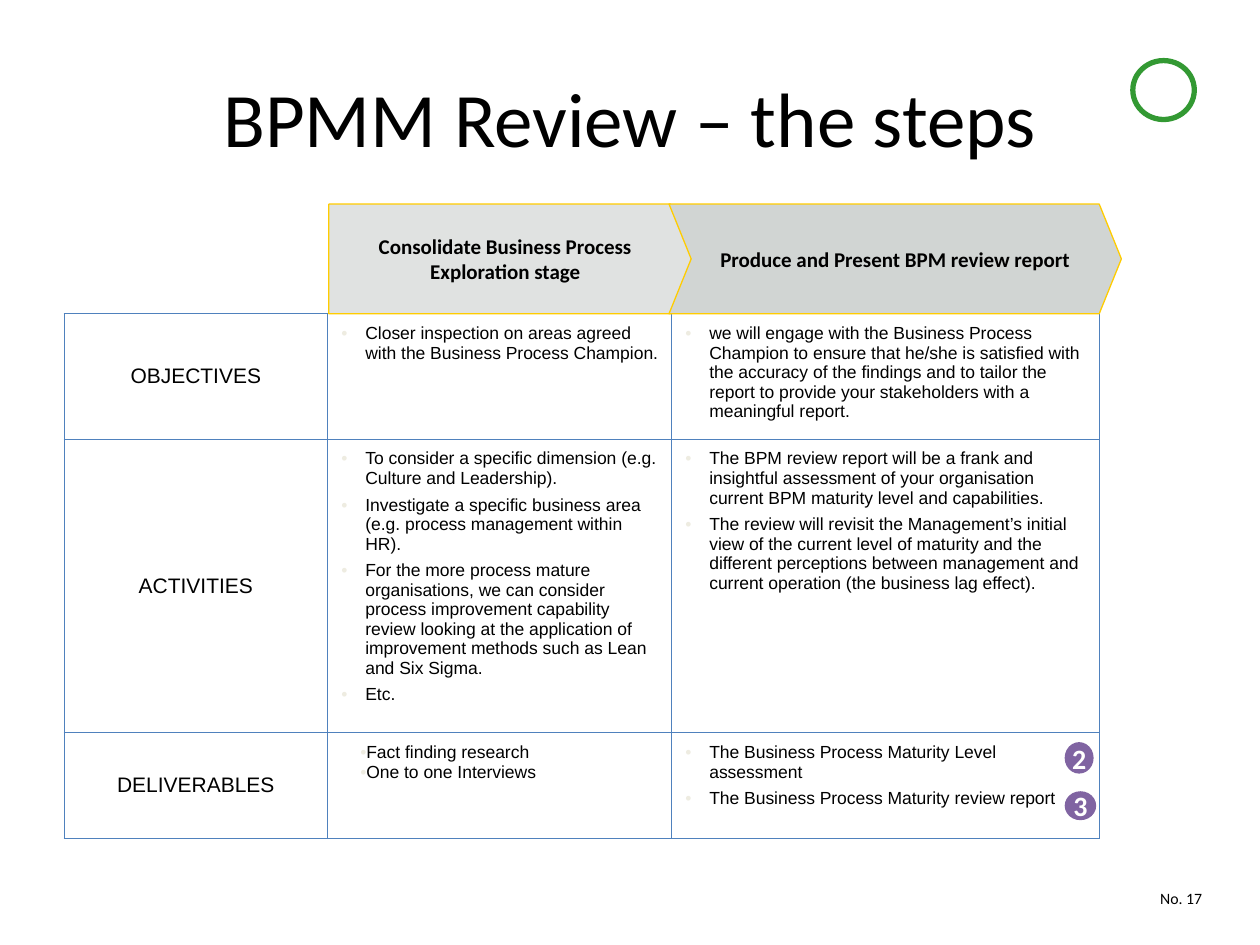
from dataclasses import dataclass

from lxml.etree import SubElement
from pptx import Presentation
from pptx.dml.color import RGBColor
from pptx.enum.shapes import MSO_SHAPE as Preset
from pptx.enum.text import MSO_ANCHOR as Anchor, PP_ALIGN as Align
from pptx.oxml import parse_xml
from pptx.oxml.ns import nsdecls, qn
from pptx.util import Inches, Pt


@dataclass(frozen=True)
class Theme:
    text: str = "000000"
    paper: str = "FFFFFF"
    grid: str = "4F81BD"
    bullet: str = "EEECE1"
    stage_line: str = "FFCC00"
    badge: str = "8064A2"
    ring: str = "339933"
    heading_font: str = "Calibri"
    table_font: str = "Arial"
    title_size: int = 44
    badge_size: int = 16
    label_size: int = 12
    item_size: int = 10
    number_size: int = 9


THEME = Theme()

STAGES = [
    (Preset.PENTAGON, 2.61, 2.89, 0.207, "E0E2E1",
     "Consolidate Business Process Exploration stage"),
    (Preset.CHEVRON, 5.31, 3.59, 0.202, "D1D5D3",
     "Produce and Present BPM review report"),
]
HANGING = {"left": 0.2, "indent": -0.19, "gap": 4}
FLUSH = {"left": 0.16, "indent": 0, "gap": 0}
COLUMN_WIDTHS = [2.09, 2.73, 3.4]
STEPS = [
    ("OBJECTIVES", 0.95, HANGING,
     ["Closer inspection on areas agreed with the Business Process Champion."],
     ["we will engage with the Business Process Champion to ensure that he/she is "
      "satisfied with the accuracy of the findings and to tailor the report to "
      "provide your stakeholders with a meaningful report."]),
    ("ACTIVITIES", 2.19, HANGING,
     ["To consider a specific dimension (e.g. Culture and Leadership).",
      "Investigate a specific business area (e.g. process management within HR).",
      "For the more process mature organisations, we can consider process "
      "improvement capability review looking at the application of improvement "
      "methods such as Lean and Six Sigma.",
      "Etc."],
     ["The BPM review report will be a frank and insightful assessment of your "
      "organisation current BPM maturity level and capabilities.",
      "The review will revisit the Management’s initial view of the current level "
      "of maturity and the different perceptions between management and current "
      "operation (the business lag effect)."]),
    ("DELIVERABLES", 0.84, FLUSH,
     ["Fact finding research", "One to one Interviews"],
     ["The Business Process Maturity Level assessment",
      "The Business Process Maturity review report"]),
]
BADGES = [("2", 5.89, 0.23, 0.25), ("3", 6.28, 0.25, 0.23)]


def rgb(value):
    return RGBColor.from_string(value)


def apply(target, formats):
    for name, value in formats.items():
        setattr(target, name, value)


def write(paragraph, words, size, font=THEME.heading_font, color=THEME.text,
          bold=False, align=Align.CENTER):
    paragraph.alignment = align
    run = paragraph.add_run()
    run.text = words
    apply(run.font, {"name": font, "size": Pt(size), "bold": bold})
    run.font.color.rgb = rgb(color)


def add_plain_shape(slide, preset, place, fill, line=None):
    shape = slide.shapes.add_shape(preset, *map(Inches, place))
    shape.shadow.inherit = False
    shape.fill.solid()
    shape.fill.fore_color.rgb = rgb(fill)
    if line:
        shape.line.color.rgb = rgb(line)
        shape.line.width = Pt(0.75)
    else:
        shape.line.fill.background()
    return shape


def add_title(slide, words):
    title = slide.shapes.title
    apply(title, {"left": Inches(0.5), "top": Inches(0.3),
                  "width": Inches(9), "height": Inches(1.25)})
    title.text_frame.vertical_anchor = Anchor.MIDDLE
    write(title.text_frame.paragraphs[0], words, THEME.title_size)


def add_page_number(slide, words):
    frame = slide.shapes.add_textbox(
        *map(Inches, (8.69, 7.02, 0.85, 0.18))).text_frame
    apply(frame, {"word_wrap": True, "vertical_anchor": Anchor.BOTTOM,
                  "margin_left": 0, "margin_right": 0,
                  "margin_top": 0, "margin_bottom": 0})
    write(frame.paragraphs[0], words, THEME.number_size, align=Align.RIGHT)


def add_stage(slide, preset, left, width, point, fill, words):
    stage = add_plain_shape(slide, preset, (left, 1.62, width, 0.87), fill,
                            THEME.stage_line)
    stage.adjustments[0] = point
    apply(stage.text_frame, {"word_wrap": True, "vertical_anchor": Anchor.MIDDLE})
    write(stage.text_frame.paragraphs[0], words, THEME.label_size, bold=True)


def add_badge(slide, digit, top, width, height):
    badge = add_plain_shape(slide, Preset.OVAL, (8.45, top, width, height),
                            THEME.badge)
    apply(badge.text_frame, {"word_wrap": False, "vertical_anchor": Anchor.MIDDLE,
                             "margin_left": 0, "margin_right": 0,
                             "margin_top": 0, "margin_bottom": 0})
    write(badge.text_frame.paragraphs[0], digit, THEME.badge_size,
          color=THEME.paper, bold=True)


def set_bullet(paragraph, left, indent):
    properties = paragraph._p.get_or_add_pPr()
    properties.set("marL", str(Inches(left)))
    properties.set("indent", str(Inches(indent)))
    bullet_color = SubElement(properties, qn("a:buClr"))
    SubElement(bullet_color, qn("a:srgbClr")).set("val", THEME.bullet)
    SubElement(properties, qn("a:buFont")).set("typeface", THEME.table_font)
    SubElement(properties, qn("a:buChar")).set("char", "•")


def format_cell(cell, anchor):
    apply(cell, {"vertical_anchor": anchor,
                 "margin_left": Inches(0.1), "margin_right": Inches(0.1),
                 "margin_top": Inches(0.08), "margin_bottom": Inches(0.08)})
    properties = cell._tc.get_or_add_tcPr()
    for position, side in enumerate(("lnL", "lnR", "lnT", "lnB")):
        properties.insert(position, parse_xml(
            f'<a:{side} {nsdecls("a")} w="{Pt(0.75)}"><a:solidFill>'
            f'<a:srgbClr val="{THEME.grid}"/></a:solidFill></a:{side}>'))


def fill_label(cell, words):
    format_cell(cell, Anchor.MIDDLE)
    cell.fill.solid()
    cell.fill.fore_color.rgb = rgb(THEME.paper)
    write(cell.text_frame.paragraphs[0], words, THEME.label_size, THEME.table_font)


def fill_items(cell, items, layout):
    format_cell(cell, Anchor.TOP)
    cell.fill.background()
    for index, words in enumerate(items):
        frame = cell.text_frame
        paragraph = frame.add_paragraph() if index else frame.paragraphs[0]
        paragraph.level = 1
        set_bullet(paragraph, layout["left"], layout["indent"])
        paragraph.space_before = Pt(layout["gap"] if index else 0)
        write(paragraph, words, THEME.item_size, THEME.table_font, align=Align.LEFT)


def add_steps_table(slide):
    heights = [step[1] for step in STEPS]
    place = (0.51, 2.49, sum(COLUMN_WIDTHS), sum(heights))
    table = slide.shapes.add_table(len(STEPS), len(COLUMN_WIDTHS),
                                   *map(Inches, place)).table
    apply(table, {"first_row": False, "horz_banding": False})
    for column, width in zip(table.columns, COLUMN_WIDTHS):
        column.width = Inches(width)
    for row, (label, height, layout, exploration, report) in zip(table.rows, STEPS):
        row.height = Inches(height)
        label_cell, exploration_cell, report_cell = row.cells
        fill_label(label_cell, label)
        fill_items(exploration_cell, exploration, layout)
        fill_items(report_cell, report, HANGING)


def main():
    deck = Presentation()
    apply(deck, {"slide_width": Inches(10), "slide_height": Inches(7.5)})
    slide = deck.slides.add_slide(deck.slide_layouts[5])
    ring = add_plain_shape(slide, Preset.DONUT, (8.97, 0.46, 0.53, 0.51), THEME.ring)
    ring.adjustments[0] = 0.082
    add_page_number(slide, "No. 17")
    add_title(slide, "BPMM Review – the steps")
    add_steps_table(slide)
    for stage in STAGES:
        add_stage(slide, *stage)
    for badge in BADGES:
        add_badge(slide, *badge)
    deck.save("out.pptx")


if __name__ == "__main__":
    main()
